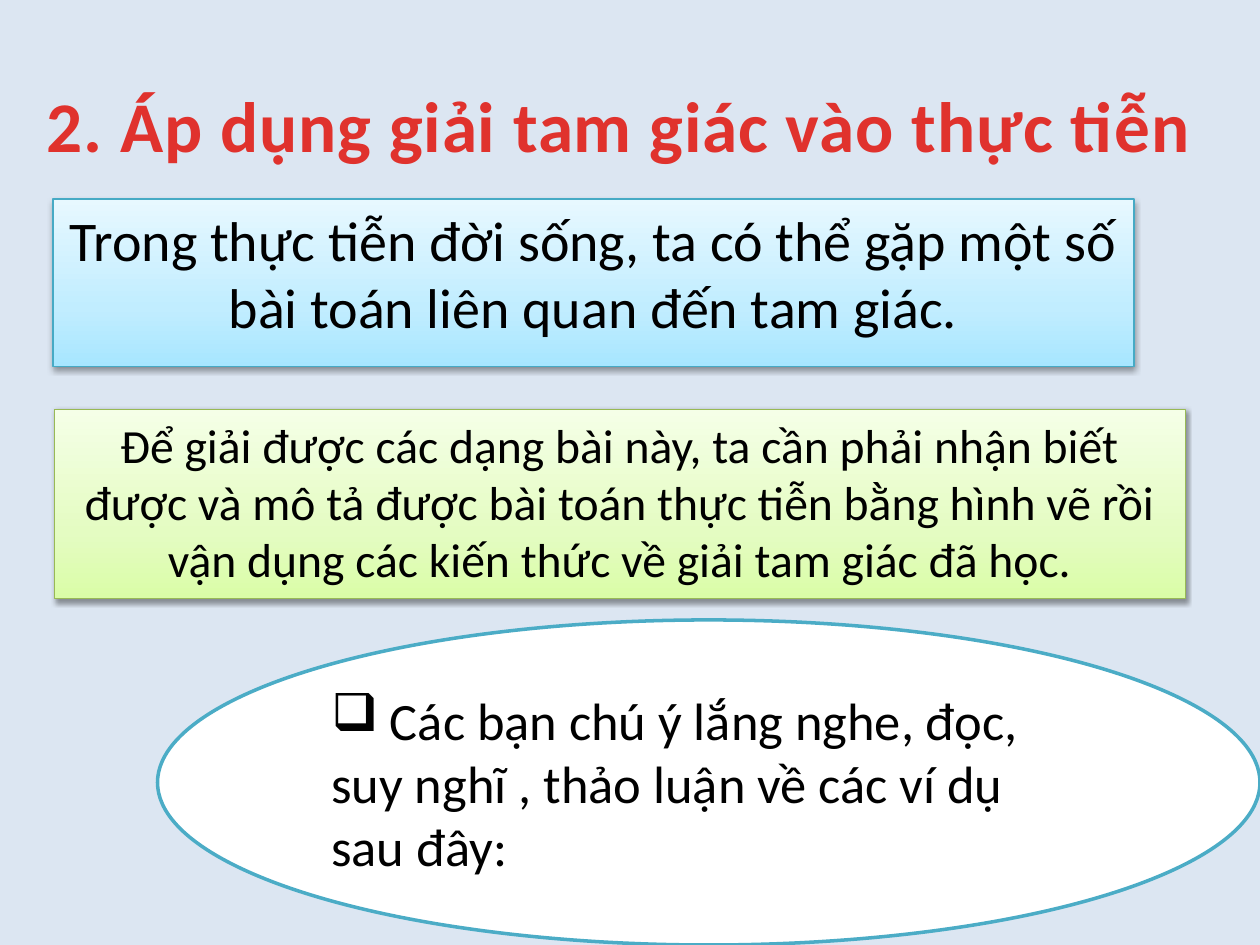
import copy

import lxml.etree
import pptx
import pptx.dml.color
import pptx.enum.shapes
import pptx.enum.text
import pptx.oxml.ns
import pptx.util

RGB = pptx.dml.color.RGBColor
Pt = pptx.util.Pt
KIND = pptx.enum.shapes.MSO_SHAPE
ALIGN = pptx.enum.text.PP_ALIGN
ANCHOR = pptx.enum.text.MSO_ANCHOR
qn = pptx.oxml.ns.qn

BACK = RGB(0xDC, 0xE6, 0xF2)
RED = RGB(0xE0, 0x32, 0x2D)
BLACK = RGB(0, 0, 0)
WHITE = RGB(0xFF, 0xFF, 0xFF)
TEAL = RGB(0x4B, 0xAC, 0xC6)
BLUE_EDGE = RGB(0x46, 0xAA, 0xC5)
BLUES = RGB(0xA7, 0xE6, 0xFF), RGB(0xC1, 0xED, 0xFF), RGB(0xE7, 0xF8, 0xFF)
GREEN_EDGE = RGB(0x98, 0xB9, 0x55)
GREENS = RGB(0xDA, 0xFD, 0xA7), RGB(0xE4, 0xFC, 0xC2), RGB(0xF5, 0xFF, 0xE7)
STOPS = 0, 0.35, 1


def node(parent, tag, **attrs):
    return lxml.etree.SubElement(parent, qn(tag), attrs)


class Deck:
    """Holds the style and the current slide; places are percent of its size."""

    font = "Calibri"

    def __init__(self, wide, high):
        self.show = pptx.Presentation()
        self.show.slide_width = pptx.util.Inches(wide)
        self.show.slide_height = pptx.util.Inches(high)
        self.slide = self.show.slides.add_slide(self.show.slide_layouts[6])
        fill = self.slide.background.fill
        fill.solid()
        fill.fore_color.rgb = BACK

    def place(self, left, top, wide, high):
        width, height = self.show.slide_width, self.show.slide_height
        return [round(share * size / 100) for share, size in
                zip((left, top, wide, high), (width, height, width, height))]

    def label(self, shape, text, size, color=BLACK, bold=False,
              align=ALIGN.CENTER, anchor=ANCHOR.MIDDLE):
        frame = shape.text_frame
        frame.word_wrap = True
        frame.vertical_anchor = anchor
        para = frame.paragraphs[0]
        para.alignment = align
        run = para.add_run()
        run.text = text
        form = {"name": self.font, "size": Pt(size), "bold": bold}
        for name, value in form.items():
            setattr(run.font, name, value)
        run.font.color.rgb = color
        return para

    def title(self, text, spot, size):
        box = self.slide.shapes.add_textbox(*self.place(*spot))
        para = self.label(box, text, size, RED, True)
        para.runs[0]._r.get_or_add_rPr().set("spc", "50")

    def shape(self, kind, spot, edge, width):
        shape = self.slide.shapes.add_shape(kind, *self.place(*spot))
        shape.shadow.inherit = False
        shape.line.color.rgb = edge
        shape.line.width = Pt(width)
        return shape

    def panel(self, text, spot, size, colors, edge):
        """Add a box with a three-stop gradient and a soft drop shadow."""
        box = self.shape(KIND.RECTANGLE, spot, edge, 0.75)
        box.fill.gradient()
        box.fill.gradient_angle = 90
        props = box._element.spPr
        stops = props.find(qn("a:gradFill")).find(qn("a:gsLst"))
        stops.append(copy.deepcopy(stops[-1]))
        for stop, share, color in zip(box.fill.gradient_stops, STOPS, colors):
            stop.position = share
            stop.color.rgb = color
        shade = node(props.find(qn("a:effectLst")), "a:outerShdw",
                     blurRad="40000", dist="20000", dir="5400000",
                     rotWithShape="0")
        node(node(shade, "a:srgbClr", val="000000"), "a:alpha", val="38000")
        self.label(box, text, size, anchor=ANCHOR.TOP)

    def bubble(self, text, spot, size, mark):
        oval = self.shape(KIND.OVAL, spot, TEAL, 2)
        oval.fill.solid()
        oval.fill.fore_color.rgb = WHITE
        para = self.label(oval, text, size, align=ALIGN.LEFT)
        node(para._p.get_or_add_pPr(), "a:buChar", char=mark)


def main():
    deck = Deck(10, 7.5)
    deck.title("2. Áp dụng giải tam giác vào thực tiễn",
               (0.8, 4, 96.7, 18.27), 40.7)
    deck.panel("Trong thực tiễn đời sống, ta có thể gặp một số bài toán "
               "liên quan đến tam giác.",
               (4.2, 21.07, 85.8, 17.73), 32, BLUES, BLUE_EDGE)
    deck.panel("Để giải được các dạng bài này, ta cần phải nhận biết được "
               "và mô tả được bài toán thực tiễn bằng hình vẽ rồi vận dụng "
               "các kiến thức về giải tam giác đã học.",
               (4.3, 43.33, 89.8, 20), 27.2, GREENS, GREEN_EDGE)
    deck.bubble(" Các bạn chú ý lắng nghe, đọc, suy nghĩ , thảo luận về "
                "các ví dụ sau đây:",
                (12.5, 65.6, 87.5, 34.4), 30, "❑")
    deck.show.save("out.pptx")


if __name__ == "__main__":
    main()
